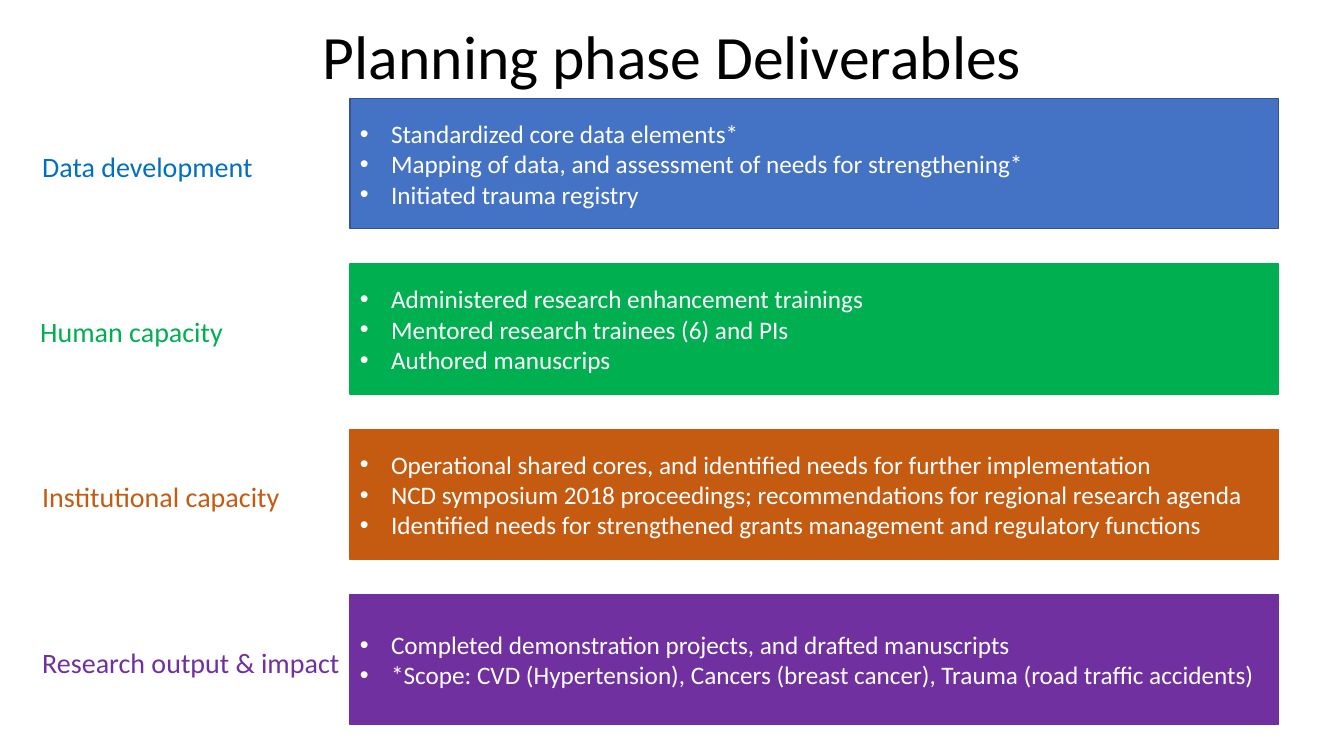
"""Build the planning phase deliverables slide."""
from dataclasses import dataclass

from lxml.etree import SubElement
from pptx import Presentation
from pptx.dml.color import RGBColor as RGB
from pptx.enum.shapes import MSO_SHAPE as Shape
from pptx.enum.text import MSO_ANCHOR as Anchor, MSO_AUTO_SIZE as AutoSize, PP_ALIGN as Align
from pptx.oxml.ns import qn
from pptx.util import Inches, Pt

TITLE = "Planning phase Deliverables"
AREAS = [
    ("Data development", 0.32, 2.37, "data", [
        "Standardized core data elements*",
        "Mapping of data, and assessment of needs for strengthening*",
        "Initiated trauma registry",
    ]),
    ("Human capacity", 0.3, 2.03, "human", [
        "Administered research enhancement trainings",
        "Mentored research trainees (6) and PIs",
        "Authored manuscrips",
    ]),
    ("Institutional capacity", 0.32, 2.58, "institution", [
        "Operational shared cores, and identified needs for further implementation",
        "NCD symposium 2018 proceedings; recommendations for regional research agenda",
        "Identified needs for strengthened grants management and regulatory functions",
    ]),
    ("Research output & impact", 0.32, 3.18, "research", [
        "Completed demonstration projects, and drafted manuscripts",
        "*Scope: CVD (Hypertension), Cancers (breast cancer), Trauma (road traffic accidents)",
    ]),
]


@dataclass(frozen=True)
class Theme:
    """Fonts, sizes and (label, fill, line) colours."""
    font = "Calibri"
    title_size, label_size, item_size = 44, 20, 18
    title, item = "000000", "FFFFFF"
    areas = {
        "data": ("0070C0", "4472C4", "325491"),
        "human": ("00B050",) * 3,
        "institution": ("C55A11",) * 3,
        "research": ("7030A0",) * 3,
    }


BOX_LEFT, BOX_TOP, BOX_WIDTH, BOX_HEIGHT = 3.47, 0.98, 9.21, 1.29
ROW_STEP = 1.64
LABEL_DROP, LABEL_HEIGHT = 0.45, 0.44
BULLET_INDENT = Inches(0.31)


def write(paragraph, words, size, color, align=Align.LEFT):
    """Fill a paragraph and set its font."""
    paragraph.text = words
    paragraph.alignment = align
    paragraph.font.name = Theme.font
    paragraph.font.size = Pt(size)
    paragraph.font.color.rgb = RGB.from_string(color)


def add_bullet(paragraph):
    """Give a paragraph a hanging bullet."""
    properties = paragraph._p.get_or_add_pPr()
    properties.set("marL", str(BULLET_INDENT))
    properties.set("indent", str(-BULLET_INDENT))
    bullet_font = SubElement(properties, qn("a:buFont"))
    bullet_font.set("typeface", "Arial")
    SubElement(properties, qn("a:buChar")).set("char", "•")
    font_properties = properties.find(qn("a:defRPr"))
    if font_properties is not None:
        properties.append(font_properties)


def add_label(slide, name, left, top, width, color):
    """Add the name of an area."""
    label = slide.shapes.add_textbox(
        Inches(left), Inches(top), Inches(width), Inches(LABEL_HEIGHT))
    label.text_frame.word_wrap = False
    label.text_frame.auto_size = AutoSize.SHAPE_TO_FIT_TEXT
    write(label.text_frame.paragraphs[0], name, Theme.label_size, color)


def add_deliverables(slide, items, top, fill, line):
    """Add the coloured box with the deliverables of an area."""
    box = slide.shapes.add_shape(
        Shape.RECTANGLE, Inches(BOX_LEFT), Inches(top), Inches(BOX_WIDTH), Inches(BOX_HEIGHT))
    box.shadow.inherit = False
    box.fill.solid()
    box.fill.fore_color.rgb = RGB.from_string(fill)
    box.line.color.rgb = RGB.from_string(line)
    box.line.width = Pt(1)
    frame = box.text_frame
    frame.word_wrap = True
    frame.vertical_anchor = Anchor.MIDDLE
    for index, item in enumerate(items):
        paragraph = frame.add_paragraph() if index else frame.paragraphs[0]
        write(paragraph, item, Theme.item_size, Theme.item)
        add_bullet(paragraph)


def add_title(slide):
    """Add the slide title."""
    title = slide.shapes.add_textbox(Inches(0.92), Inches(0.19), Inches(11.5), Inches(0.8))
    title.text_frame.word_wrap = True
    title.text_frame.vertical_anchor = Anchor.MIDDLE
    heading = title.text_frame.paragraphs[0]
    write(heading, TITLE, Theme.title_size, Theme.title, Align.CENTER)
    heading.line_spacing = 0.9


def main():
    """Build and save the slide."""
    deck = Presentation()
    deck.slide_width, deck.slide_height = Inches(13.33), Inches(7.5)
    slide = deck.slides.add_slide(deck.slide_layouts[6])
    for row, (name, left, width, key, items) in enumerate(AREAS):
        top = BOX_TOP + row * ROW_STEP
        label_color, fill, line = Theme.areas[key]
        add_deliverables(slide, items, top, fill, line)
        add_label(slide, name, left, top + LABEL_DROP, width, label_color)
    add_title(slide)
    deck.save("out.pptx")


if __name__ == "__main__":
    main()
